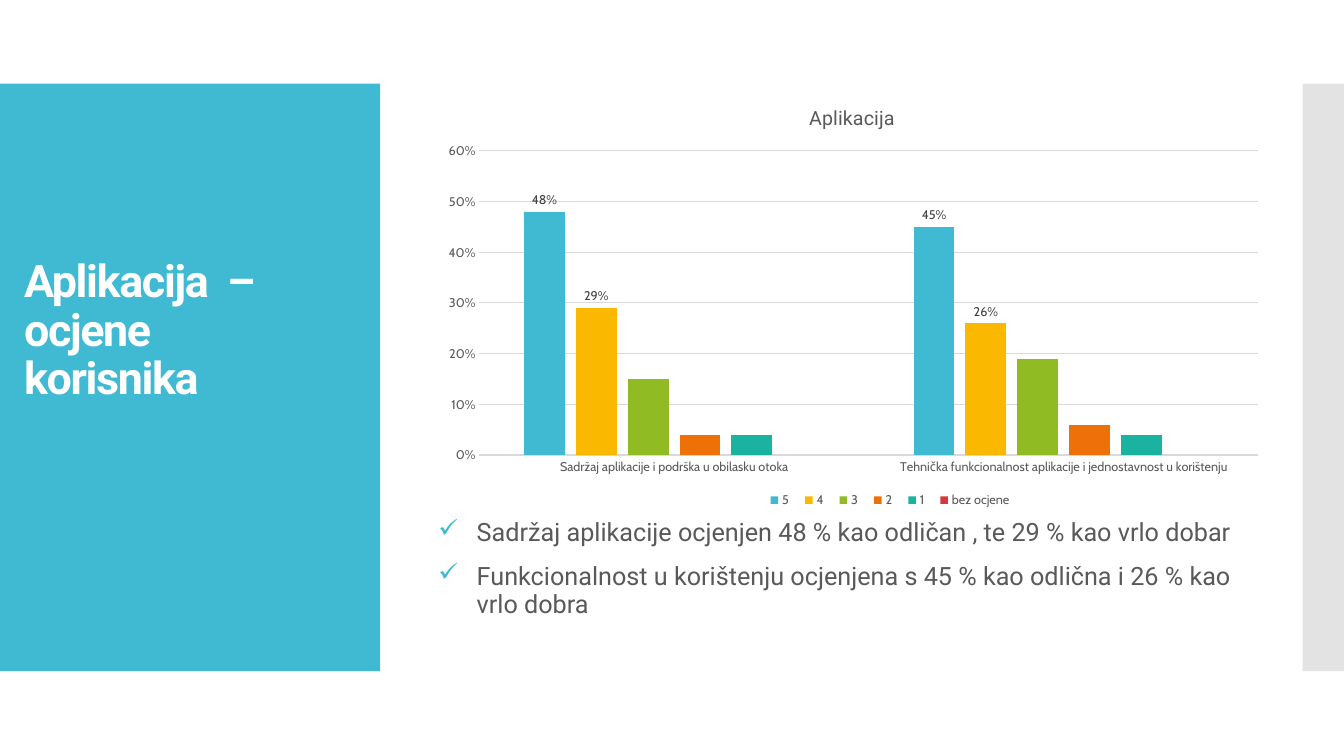
from lxml import etree
from pptx import Presentation
from pptx.chart.data import CategoryChartData
from pptx.dml.color import RGBColor
from pptx.enum.chart import XL_CHART_TYPE, XL_LABEL_POSITION, XL_LEGEND_POSITION, XL_TICK_MARK
from pptx.enum.shapes import MSO_SHAPE
from pptx.enum.text import MSO_ANCHOR
from pptx.oxml.ns import qn
from pptx.util import Inches, Pt

RECTANGLE = MSO_SHAPE.RECTANGLE
COLUMNS = XL_CHART_TYPE.COLUMN_CLUSTERED
OUTSIDE_END = XL_LABEL_POSITION.OUTSIDE_END
LEGEND_BOTTOM = XL_LEGEND_POSITION.BOTTOM
NO_TICK = XL_TICK_MARK.NONE
ANCHOR_BOTTOM = MSO_ANCHOR.BOTTOM

TEAL, WHITE, GRAY = "40BAD2", "FFFFFF", "595959"
GRID, LABEL, SIDE = "D9D9D9", "404040", "C8C8C8"

CATEGORIES = [
    "Sadržaj aplikacije i podrška u obilasku otoka",
    "Tehnička funkcionalnost aplikacije i jednostavnost u korištenju",
]
RATINGS = [
    ("5", (0.48, 0.45), TEAL, True),
    ("4", (0.29, 0.26), "FAB900", True),
    ("3", (0.15, 0.19), "90BB23", False),
    ("2", (0.04, 0.06), "EE7008", False),
    ("1", (0.04, 0.04), "1AB39F", False),
    ("bez ocjene", (None, None), "D5393D", False),
]
FINDINGS = [
    "Sadržaj aplikacije ocjenjen 48 % kao odličan , te 29 % kao vrlo dobar",
    "Funkcionalnost u korištenju ocjenjena s 45 % kao odlična i 26 % kao vrlo dobra",
]


def color(value):
    return RGBColor.from_string(value)


def child(parent, tag, **attributes):
    return etree.SubElement(parent, qn(tag), attributes)


class SlideBuilder:
    heading_font = "Roboto"
    chart_font = "Cabin"

    def __init__(self, slide):
        self.slide = slide

    def style(self, font, name, size, fill, bold=False):
        font.name, font.size, font.bold = name, Pt(size), bold
        font.color.rgb = color(fill)

    def panel(self, left, top, width, height, fill, opacity=100):
        shape = self.slide.shapes.add_shape(
            RECTANGLE, Inches(left), Inches(top), Inches(width), Inches(height))
        shape.shadow.inherit = False
        shape.fill.solid()
        shape.fill.fore_color.rgb = color(fill)
        shape.line.fill.background()
        if opacity < 100:
            fill_color = shape._element.spPr.find(qn("a:solidFill"))[0]
            child(fill_color, "a:alpha", val=str(opacity * 1000))

    def text_frame(self, left, top, width, height):
        box = self.slide.shapes.add_textbox(
            Inches(left), Inches(top), Inches(width), Inches(height))
        box.text_frame.word_wrap = True
        return box.text_frame

    def title(self, text, left, top, width, height):
        frame = self.text_frame(left, top, width, height)
        frame.vertical_anchor = ANCHOR_BOTTOM
        paragraph = frame.paragraphs[0]
        paragraph.line_spacing = 0.9
        run = paragraph.add_run()
        run.text = text
        self.style(paragraph.font, self.heading_font, 32, WHITE, True)
        run._r.get_or_add_rPr().set("spc", "-100")

    def bullets(self, items, left, top, width, height):
        frame = self.text_frame(left, top, width, height)
        for index, item in enumerate(items):
            paragraph = frame.add_paragraph() if index else frame.paragraphs[0]
            paragraph.text = item
            paragraph.line_spacing = 0.9
            if index:
                paragraph.space_before = Pt(12)
            properties = paragraph._p.get_or_add_pPr()
            properties.set("marL", str(Inches(0.38)))
            properties.set("indent", str(-Inches(0.38)))
            child(child(properties, "a:buClr"), "a:srgbClr", val=TEAL)
            child(properties, "a:buChar", char="✓")
            self.style(paragraph.font, self.heading_font, 18, GRAY)

    def place(self, element, position, bounds, inner=False):
        for old_layout in element.findall(qn("c:layout")):
            element.remove(old_layout)
        layout = etree.Element(qn("c:layout"))
        manual = child(layout, "c:manualLayout")
        if inner:
            child(manual, "c:layoutTarget", val="inner")
        child(manual, "c:xMode", val="edge")
        child(manual, "c:yMode", val="edge")
        for key, value in zip("xywh", bounds):
            child(manual, f"c:{key}", val=str(value))
        element.insert(position, layout)

    def axis(self, axis):
        axis.major_tick_mark = axis.minor_tick_mark = NO_TICK
        self.style(axis.tick_labels.font, self.chart_font, 9, GRAY)

    def grid_line(self, line):
        line.color.rgb = color(GRID)
        line.width = Pt(0.75)

    def column_chart(self, title, categories, ratings, left, top, width, height):
        data = CategoryChartData(number_format="0%")
        data.categories = categories
        for name, values, _, _ in ratings:
            data.add_series(name, values)
        chart = self.slide.shapes.add_chart(
            COLUMNS, Inches(left), Inches(top), Inches(width), Inches(height), data).chart
        self.style(chart.font, self.chart_font, 10, "000000")
        chart.has_title = True
        chart.chart_title.include_in_layout = False
        paragraph = chart.chart_title.text_frame.paragraphs[0]
        paragraph.text = title
        self.style(paragraph.font, self.heading_font, 14, GRAY)

        self.axis(chart.category_axis)
        self.grid_line(chart.category_axis.format.line)
        values_axis = chart.value_axis
        self.axis(values_axis)
        values_axis.minimum_scale, values_axis.maximum_scale = 0, 0.6
        values_axis.major_unit = 0.1
        values_axis.format.line.fill.background()
        values_axis.tick_labels.number_format = "0%"
        values_axis.tick_labels.number_format_is_linked = False
        self.grid_line(values_axis.major_gridlines.format.line)

        chart.has_legend = True
        legend = chart.legend
        legend.position = LEGEND_BOTTOM
        legend.include_in_layout = False
        self.style(legend.font, self.chart_font, 9, GRAY)
        self.place(legend._element, 1, (0.39, 0.93, 0.31, 0.07))
        plot_area = chart._chartSpace.chart.plotArea
        self.place(plot_area, 0, (0.06, 0.15, 0.92, 0.71), inner=True)

        plot = chart.plots[0]
        plot.vary_by_categories = False
        plot.gap_width, plot.overlap = 219, -27
        for series, (_, _, fill, labelled) in zip(plot.series, ratings):
            series.invert_if_negative = False
            series.format.fill.solid()
            series.format.fill.fore_color.rgb = color(fill)
            if labelled:
                labels = series.data_labels
                labels.show_value = True
                labels.number_format = "0%"
                labels.number_format_is_linked = False
                labels.position = OUTSIDE_END
                self.style(labels.font, self.chart_font, 9, LABEL)


def main():
    presentation = Presentation()
    presentation.slide_width, presentation.slide_height = Inches(13.33), Inches(7.5)
    builder = SlideBuilder(presentation.slides.add_slide(presentation.slide_layouts[6]))
    builder.panel(0, 0.83, 3.77, 5.83, TEAL)
    builder.panel(12.92, 0.83, 0.41, 5.83, SIDE, opacity=50)
    builder.bullets(FINDINGS, 4.25, 5.11, 8.29, 1.38)
    builder.title("Aplikacija  – ocjene korisnika", 0.14, 1.24, 3.22, 2.82)
    builder.column_chart("Aplikacija", CATEGORIES, RATINGS, 4.25, 0.86, 8.4, 4.25)
    presentation.save("out.pptx")


if __name__ == "__main__":
    main()
